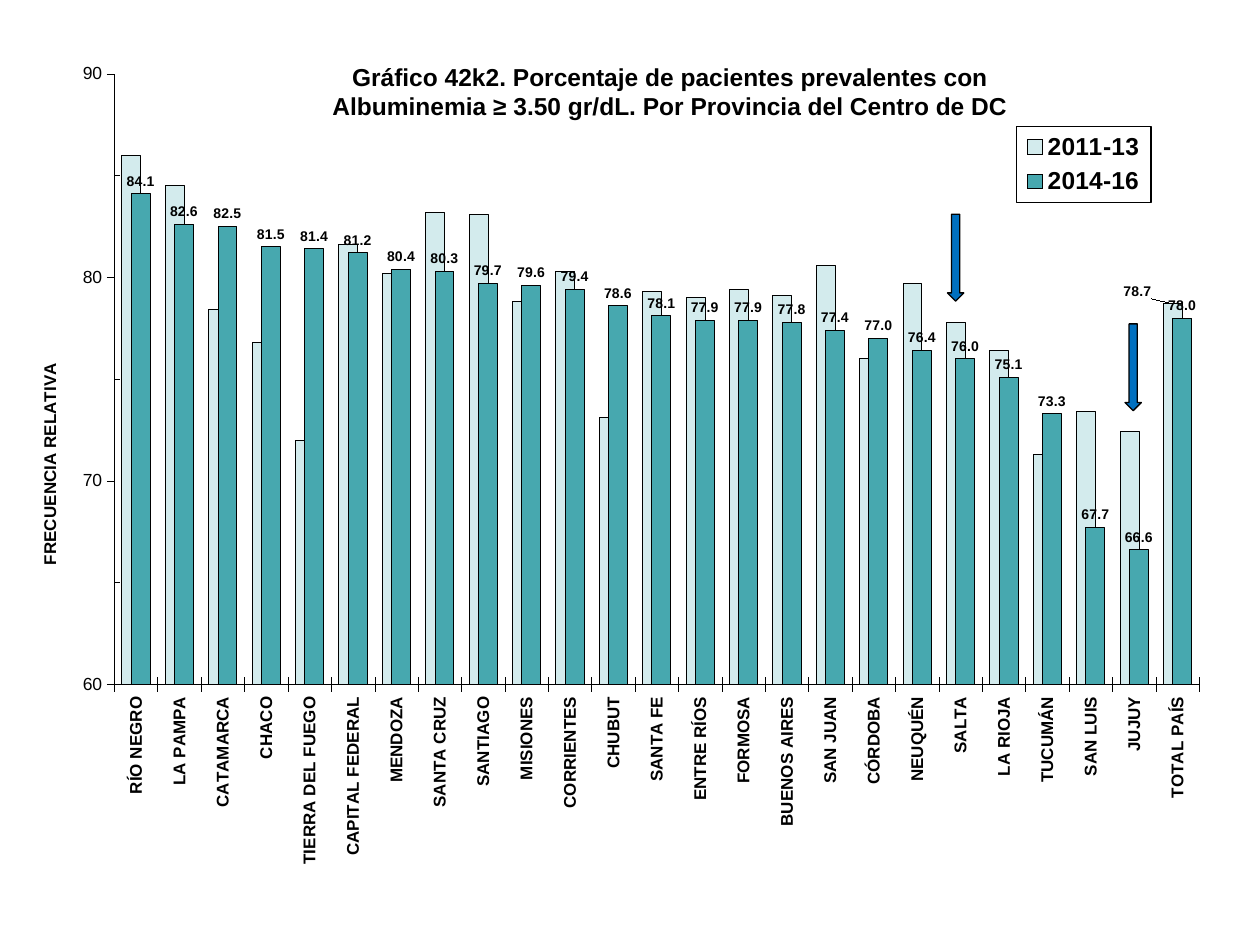
from dataclasses import dataclass

from pptx import Presentation
from pptx.chart.data import CategoryChartData
from pptx.dml.color import RGBColor
from pptx.enum.chart import (
    XL_CHART_TYPE,
    XL_LABEL_POSITION,
    XL_LEGEND_POSITION,
    XL_TICK_MARK,
)
from pptx.enum.shapes import MSO_SHAPE
from pptx.enum.text import MSO_ANCHOR, MSO_AUTO_SIZE, PP_ALIGN
from pptx.oxml import parse_xml
from pptx.oxml.ns import nsdecls
from pptx.util import Cm, Pt

FONT = "Arial"
BLACK = "000000"


@dataclass
class Period:
    name: str
    color: str
    values: list[float]


@dataclass
class Arrow:
    left: float
    top: float


PROVINCES = [
    "RÍO NEGRO", "LA PAMPA", "CATAMARCA", "CHACO", "TIERRA DEL FUEGO",
    "CAPITAL FEDERAL", "MENDOZA", "SANTA CRUZ", "SANTIAGO", "MISIONES",
    "CORRIENTES", "CHUBUT", "SANTA FE", "ENTRE RÍOS", "FORMOSA",
    "BUENOS AIRES", "SAN JUAN", "CÓRDOBA", "NEUQUÉN", "SALTA",
    "LA RIOJA", "TUCUMÁN", "SAN LUIS", "JUJUY", "TOTAL PAÍS",
]
PERIODS = [
    Period("2011-13", "D3EBED", [
        86.0, 84.5, 78.4, 76.8, 72.0, 81.6, 80.2, 83.2, 83.1, 78.8, 80.3, 73.1, 79.3,
        79.0, 79.4, 79.1, 80.6, 76.0, 79.7, 77.8, 76.4, 71.3, 73.4, 72.4, 78.7]),
    Period("2014-16", "47A8AF", [
        84.1, 82.6, 82.5, 81.5, 81.4, 81.2, 80.4, 80.3, 79.7, 79.6, 79.4, 78.6, 78.1,
        77.9, 77.9, 77.8, 77.4, 77.0, 76.4, 76.0, 75.1, 73.3, 67.7, 66.6, 78.0]),
]
ARROWS = [Arrow(19.1, 4.32), Arrow(22.68, 6.53)]
TITLE_LINES = [
    "Gráfico 42k2. Porcentaje de pacientes prevalentes con",
    "Albuminemia ≥ 3.50 gr/dL. Por Provincia del Centro de DC",
]


def rgb(color: str) -> RGBColor:
    return RGBColor.from_string(color)


def style_font(font, size: float, bold: bool = False) -> None:
    font.name = FONT
    font.size = Pt(size)
    font.bold = bold
    font.color.rgb = rgb(BLACK)


def style_line(line, width: float) -> None:
    line.color.rgb = rgb(BLACK)
    line.width = Pt(width)


def fill_solid(fill, color: str) -> None:
    fill.solid()
    fill.fore_color.rgb = rgb(color)


def write_text(frame, lines: list[str], size: float, bold: bool = False) -> None:
    for number, line in enumerate(lines):
        para = frame.add_paragraph() if number else frame.paragraphs[0]
        para.alignment = PP_ALIGN.CENTER
        span = para.add_run()
        span.text = line
        style_font(span.font, size, bold)


def manual_layout(**settings: float | str):
    tags = "".join(f'<c:{name} val="{value}"/>' for name, value in settings.items())
    return parse_xml(
        f'<c:layout {nsdecls("c")}><c:manualLayout>{tags}</c:manualLayout></c:layout>'
    )


def style_axes(chart) -> None:
    value_axis, category_axis = chart.value_axis, chart.category_axis
    value_axis.minimum_scale, value_axis.maximum_scale = 60, 90
    value_axis.major_unit, value_axis.minor_unit = 10, 5
    value_axis.has_major_gridlines = False
    value_axis.major_tick_mark = XL_TICK_MARK.OUTSIDE
    value_axis.minor_tick_mark = XL_TICK_MARK.INSIDE
    value_axis.tick_labels.number_format = "0"
    value_axis.tick_labels.number_format_is_linked = False
    write_text(value_axis.axis_title.text_frame, ["FRECUENCIA RELATIVA"], 9.7, bold=True)
    category_axis.major_tick_mark = XL_TICK_MARK.CROSS
    style_font(value_axis.tick_labels.font, 10)
    style_font(category_axis.tick_labels.font, 9.7, bold=True)
    category_axis._element.txPr.bodyPr.set("rot", "-5400000")
    for axis in (value_axis, category_axis):
        style_line(axis.format.line, 0.25)


def style_series(plot) -> None:
    plot.gap_width, plot.overlap = 80, 51
    plot.vary_by_categories = False
    for series, period in zip(plot.series, PERIODS):
        fill_solid(series.format.fill, period.color)
        style_line(series.format.line, 0.5)
    earlier, later = plot.series
    labels = later.data_labels
    labels.show_value = True
    labels.number_format = "#,##0.0"
    labels.number_format_is_linked = False
    labels.position = XL_LABEL_POSITION.OUTSIDE_END
    style_font(labels.font, 8, bold=True)
    total_label = earlier.points[len(PROVINCES) - 1].data_label
    style_font(total_label.font, 8, bold=True)
    total_label.position = XL_LABEL_POSITION.OUTSIDE_END
    label_index = earlier._element.xpath("c:dLbls/c:dLbl/c:idx")[0]
    label_index.addnext(manual_layout(x=-0.03, y=0))


def style_legend(chart) -> None:
    chart.has_legend = True
    legend = chart.legend
    legend.position = XL_LEGEND_POSITION.LEFT
    legend.include_in_layout = True
    style_font(legend.font, 14, bold=True)
    box = parse_xml(
        f'<c:spPr {nsdecls("c", "a")}><a:solidFill><a:srgbClr val="FFFFFF"/></a:solidFill>'
        f'<a:ln w="9525"><a:solidFill><a:srgbClr val="{BLACK}"/></a:solidFill></a:ln></c:spPr>'
    )
    legend._element.xpath("c:txPr")[0].addprevious(box)
    for old_layout in legend._element.xpath("c:layout"):
        legend._element.remove(old_layout)
    legend._element.xpath("c:legendPos")[0].addnext(
        manual_layout(xMode="edge", yMode="edge", x=0.831, y=0.085, w=0.114, h=0.091)
    )


def add_province_chart(slide):
    chart_data = CategoryChartData(number_format="0.0")
    chart_data.categories = PROVINCES
    for period in PERIODS:
        chart_data.add_series(period.name, period.values)
    frame = slide.shapes.add_chart(
        XL_CHART_TYPE.COLUMN_CLUSTERED, Cm(0.71), Cm(1.12), Cm(23.8), Cm(16.79), chart_data
    )
    chart = frame.chart
    chart.has_title = False
    style_font(chart.font, 11.7)
    style_axes(chart)
    style_series(chart.plots[0])
    style_legend(chart)
    plot_area = chart._chartSpace.chart.plotArea
    for old_layout in plot_area.xpath("c:layout"):
        plot_area.remove(old_layout)
    plot_area.insert(0, manual_layout(
        layoutTarget="inner", xMode="edge", yMode="edge", x=0.067, y=0.022, w=0.919, h=0.733
    ))
    return frame


def place_title(slide, chart_frame) -> None:
    title = slide.shapes.title
    title.left, title.top, title.width, title.height = Cm(3.91), Cm(1.12), Cm(19.2), Cm(1.45)
    frame = title.text_frame
    frame.word_wrap = True
    frame.auto_size = MSO_AUTO_SIZE.NONE
    frame.vertical_anchor = MSO_ANCHOR.TOP
    write_text(frame, TITLE_LINES, 14, bold=True)
    chart_frame.element.addnext(title.element)


def add_arrow(slide, arrow: Arrow) -> None:
    shape = slide.shapes.add_shape(
        MSO_SHAPE.DOWN_ARROW, Cm(arrow.left), Cm(arrow.top), Cm(0.33), Cm(1.75)
    )
    shape.shadow.inherit = False
    fill_solid(shape.fill, "0070C0")
    style_line(shape.line, 0.75)


def main() -> None:
    deck = Presentation()
    deck.slide_width, deck.slide_height = Cm(25.4), Cm(19.05)
    slide = deck.slides.add_slide(deck.slide_layouts[5])
    chart_frame = add_province_chart(slide)
    place_title(slide, chart_frame)
    for arrow in ARROWS:
        add_arrow(slide, arrow)
    deck.save("out.pptx")


if __name__ == "__main__":
    main()
